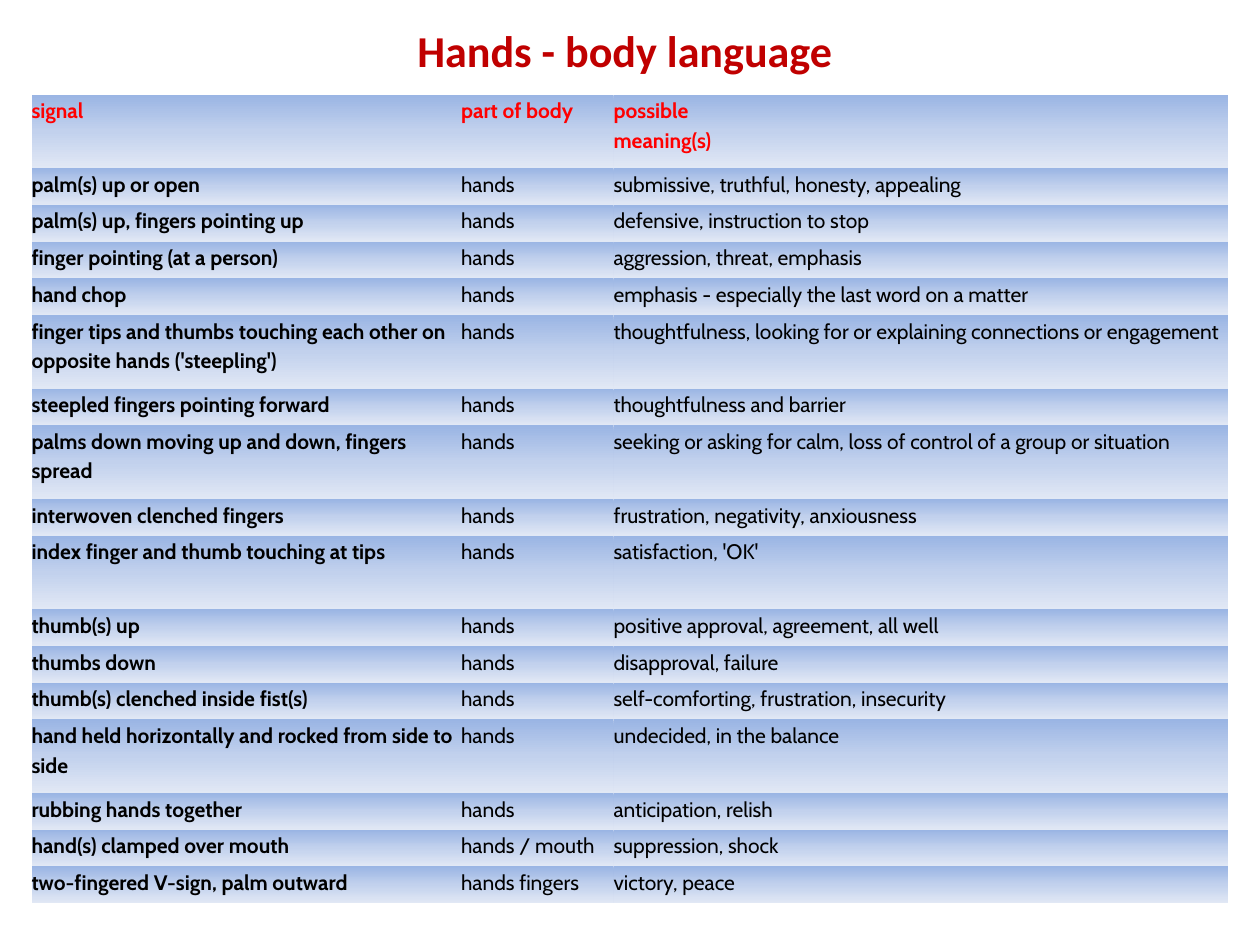
from dataclasses import dataclass

from lxml.etree import SubElement
from pptx import Presentation
from pptx.dml.color import RGBColor
from pptx.enum.text import MSO_ANCHOR, PP_ALIGN
from pptx.oxml.ns import qn
from pptx.util import Inches, Pt


@dataclass(frozen=True)
class Theme:
    title_font: str = "Calibri"
    body_font: str = "Cabin"
    title_size: float = 25.2
    body_size: float = 12
    line_spacing: float = 1.15
    title: str = "C00000"
    header: str = "FF0000"
    text: str = "000000"
    gradient: tuple = ((0, "9AB5E4"), (50, "C2D1ED"), (100, "E1E8F5"))
    no_grid_style: str = "{2D5ABB26-0587-4C30-8999-92F81FD0307C}"


THEME = Theme()
HEADER = ("signal", "part of body", "possible \vmeaning(s)")
COLUMN_WIDTHS = (3.41, 1.21, 4.88)
# Height in row units, signal, part of body, possible meanings
SIGNALS = [
    (1, "palm(s) up or open", "hands", "submissive, truthful, honesty, appealing"),
    (1, "palm(s) up, fingers pointing up", "hands", "defensive, instruction to stop"),
    (1, "finger pointing (at a person)", "hands", "aggression, threat, emphasis"),
    (1, "hand chop", "hands", "emphasis - especially the last word on a matter"),
    (2, "finger tips and thumbs touching each other on opposite hands ('steepling')", "hands",
     "thoughtfulness, looking for or explaining connections or engagement"),
    (1, "steepled fingers pointing forward", "hands", "thoughtfulness and barrier"),
    (2, "palms down moving up and down, fingers spread", "hands",
     "seeking or asking for calm, loss of control of a group or situation"),
    (1, "interwoven clenched fingers", "hands", "frustration, negativity, anxiousness"),
    (2, "index finger and thumb touching at tips", "hands", "satisfaction, 'OK'"),
    (1, "thumb(s) up", "hands", "positive approval, agreement, all well"),
    (1, "thumbs down", "hands", "disapproval, failure"),
    (1, "thumb(s) clenched inside fist(s)", "hands", "self-comforting, frustration, insecurity"),
    (2, "hand held horizontally and rocked from side to side", "hands",
     "undecided, in the balance"),
    (1, "rubbing hands together", "hands", "anticipation, relish"),
    (1, "hand(s) clamped over mouth", "hands / mouth", "suppression, shock"),
    (1, "two-fingered V-sign, palm outward", "hands fingers", "victory, peace"),
]


def set_font(p, name, size, color, bold):
    p.font.name = name
    p.font.size = Pt(size)
    p.font.bold = bold
    p.font.color.rgb = RGBColor.from_string(color)


def fill_gradient(cell):
    """Fill a cell from top to bottom with the theme's gradient."""
    grad = SubElement(cell._tc.get_or_add_tcPr(), qn("a:gradFill"), rotWithShape="1")
    stops = SubElement(grad, qn("a:gsLst"))
    for percent, color in THEME.gradient:
        stop = SubElement(stops, qn("a:gs"), pos=str(percent * 1000))
        SubElement(stop, qn("a:srgbClr"), val=color)
    SubElement(grad, qn("a:lin"), ang=str(90 * 60000), scaled="0")


def add_title(s, text, left, top, width, height):
    sp = s.shapes.title
    sp.left, sp.top, sp.width, sp.height = left, top, width, height
    tf = sp.text_frame
    tf.text = text
    tf.vertical_anchor = MSO_ANCHOR.BOTTOM
    tf.margin_top = 0
    tf.margin_bottom = Inches(0.14)
    p = tf.paragraphs[0]
    p.alignment = PP_ALIGN.CENTER
    set_font(p, THEME.title_font, THEME.title_size, THEME.title, True)


def write_cell(cell, text, color, bold):
    cell.margin_left = cell.margin_right = cell.margin_top = cell.margin_bottom = 0
    fill_gradient(cell)
    cell.text = text
    p = cell.text_frame.paragraphs[0]
    p.line_spacing = THEME.line_spacing
    set_font(p, THEME.body_font, THEME.body_size, color, bold)


def add_signal_table(s, left, top, width, height):
    rows = [(2, *HEADER), *SIGNALS]
    unit = height / sum(row[0] for row in rows)
    table = s.shapes.add_table(len(rows), len(HEADER), left, top, width, height).table
    table._tbl.tblPr.find(qn("a:tableStyleId")).text = THEME.no_grid_style
    for column, share in zip(table.columns, COLUMN_WIDTHS):
        column.width = int(width * share / sum(COLUMN_WIDTHS))
    for i, (units, *texts) in enumerate(rows):
        table.rows[i].height = int(units * unit)
        for j, text in enumerate(texts):
            color = THEME.header if i == 0 else THEME.text
            write_cell(table.cell(i, j), text, color, i == 0 or j == 0)


def main():
    prs = Presentation()
    prs.slide_width, prs.slide_height = Inches(10), Inches(7.5)
    s = prs.slides.add_slide(prs.slide_layouts[5])
    add_title(s, "Hands - body language",
              Inches(0.75), Inches(0.42), Inches(8.42), Inches(0.33))
    add_signal_table(s, Inches(0.25), Inches(0.75), Inches(9.5), Inches(6.42))
    prs.save("out.pptx")


if __name__ == "__main__":
    main()
